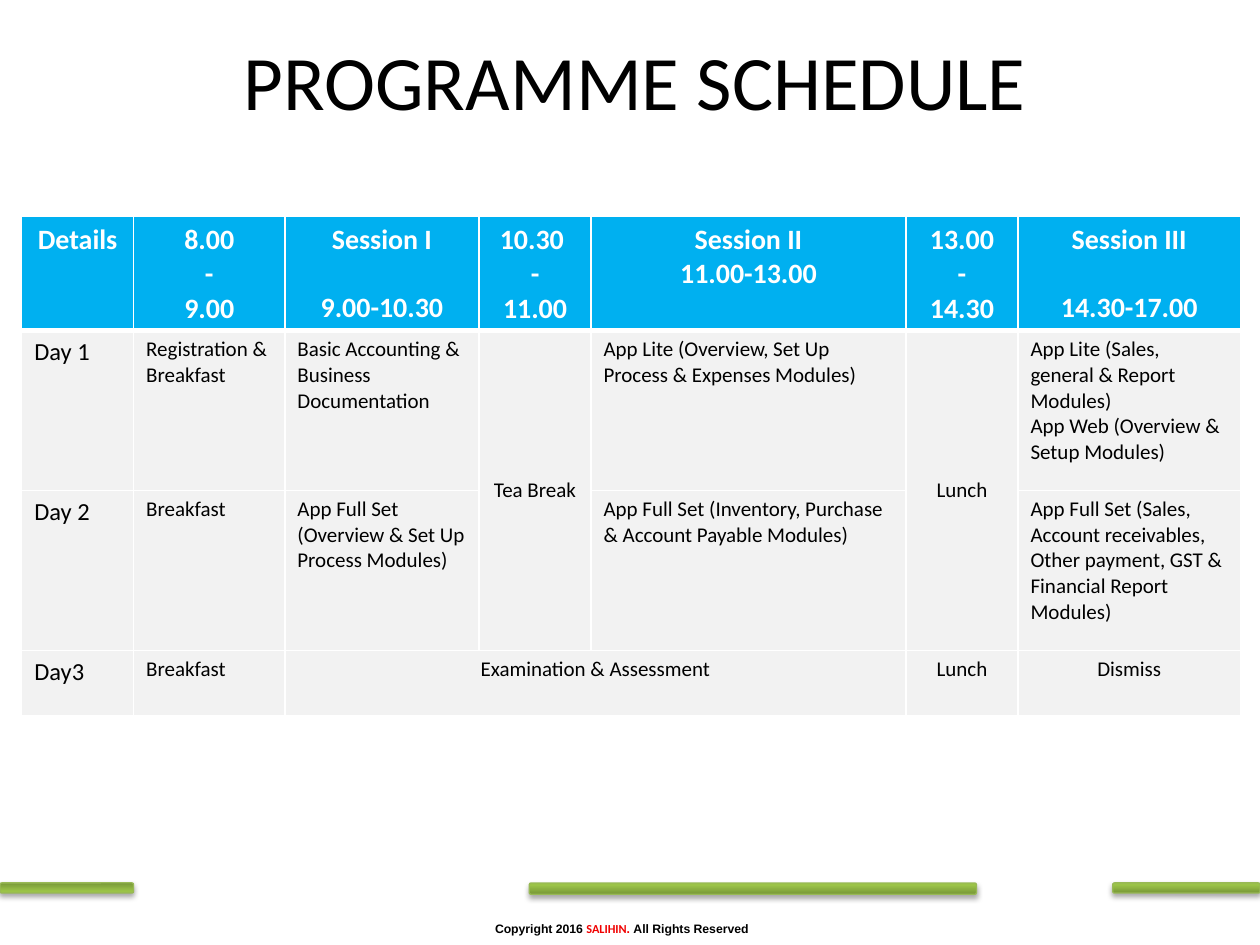
from lxml import etree
from pptx import Presentation
from pptx import util as u
from pptx.dml.color import RGBColor
from pptx.enum import shapes, text
from pptx.oxml import ns

COLOURS = {
    "header": "00B0F0", "body": "F2F2F2", "white": "FFFFFF", "black": "000000",
    "red": "F00000", "bar_dark": "779737", "bar_light": "9BC348",
    "bar_line": "98B955",
}
COLUMNS = [64, 86.4, 111, 64, 180, 64, 127.2]
ROWS = [64.8, 91.4, 91.4, 37.4]
HEADER = [
    ["Details"],
    ["8.00", "-", "9.00"],
    ["Session I", "9.00-10.30"],
    ["10.30 ", "-", "11.00"],
    ["Session II", "11.00-13.00"],
    ["13.00", "-", "14.30"],
    ["Session III", "14.30-17.00"],
]
LINE_GAPS = {2: 19.5, 6: 19.5}  # column: space above the session's time
BODY = [
    [["Day 1"], ["Registration & Breakfast"],
     ["Basic Accounting & Business Documentation"], ["Tea Break"],
     ["App Lite (Overview, Set Up Process & Expenses Modules)"], ["Lunch"],
     ["App Lite (Sales, general & Report Modules)",
      "App Web (Overview & Setup Modules)"]],
    [["Day 2"], ["Breakfast"],
     ["App Full Set (Overview & Set Up Process Modules)"], None,
     ["App Full Set (Inventory, Purchase & Account Payable Modules)"], None,
     ["App Full Set (Sales, Account receivables, Other payment, GST & "
      "Financial Report Modules)"]],
    [["Day3"], ["Breakfast"], ["Examination & Assessment"], None, None,
     ["Lunch"], ["Dismiss"]],
]
MERGES = [((1, 3), (2, 3)), ((1, 5), (2, 5)), ((3, 2), (3, 4))]
CENTRED = {(1, 3), (1, 5), (3, 2), (3, 5), (3, 6)}


def rgb(name):
    return RGBColor.from_string(COLOURS[name])


def set_font(font, colour, **values):
    font.color.rgb = rgb(colour)
    for name, value in values.items():
        setattr(font, name, value)


def place(box, left, top, width, height):
    frame = dict(left=left, top=top, width=width, height=height)
    for name, value in frame.items():
        setattr(box, name, u.Pt(value))


def add_child(parent, tag, **attributes):
    return etree.SubElement(parent, ns.qn(tag), attributes)


def add_title(page, words):
    title = page.shapes.title
    place(title, 36, 12.2, 653.8, 66.2)
    title.text_frame.vertical_anchor = text.MSO_ANCHOR.MIDDLE
    para = title.text_frame.paragraphs[0]
    para.alignment = text.PP_ALIGN.CENTER
    span = para.add_run()
    span.text = words
    set_font(span.font, "black", name="Calibri", size=u.Pt(44))


def add_bar(page, left, width, height, flipped):
    """Add a green footer bar with a soft shadow below it."""
    bar = page.shapes.add_shape(
        shapes.MSO_SHAPE.ROUNDED_RECTANGLE,
        u.Pt(left), u.Pt(504.5), u.Pt(width), u.Pt(height))
    bar.rotation = 180
    properties = bar._element.spPr
    if flipped:
        properties.find(ns.qn("a:xfrm")).set("flipV", "1")
    bar.fill.gradient()
    bar.fill.gradient_angle = 90
    stops = [(0, "bar_dark"), (0.8, "bar_light")]
    for stop, (position, colour) in zip(bar.fill.gradient_stops, stops):
        stop.position = position
        stop.color.rgb = rgb(colour)
    bar.line.color.rgb = rgb("bar_line")
    bar.line.width = u.Pt(0.75)
    effects = add_child(properties, "a:effectLst")
    shadow = add_child(effects, "a:outerShdw", blurRad=str(u.Pt(3.1)),
                       dist=str(u.Pt(1.8)), dir="5400000", rotWithShape="0")
    shade = add_child(shadow, "a:srgbClr", val=COLOURS["black"])
    add_child(shade, "a:alpha", val="35000")


def add_copyright(page):
    box = page.shapes.add_textbox(
        u.Pt(275.8), u.Pt(522.7), u.Pt(302.4), u.Pt(15.8))
    box.text_frame.word_wrap = True
    para = box.text_frame.paragraphs[0]
    for words, font, colour in [
            ("Copyright 2016 ", "Arial", "black"), ("SALIHIN", "Calibri", "red"),
            (". ", "Arial", "red"), ("All Rights Reserved", "Arial", "black")]:
        span = para.add_run()
        span.text = words
        set_font(span.font, colour, name=font, size=u.Pt(7), bold=True)


def set_borders(cell, row):
    properties = cell._tc.get_or_add_tcPr()
    widths = {"a:lnL": 1, "a:lnR": 1, "a:lnT": 3 if row == 1 else 1,
              "a:lnB": 3 if row == 0 else 1}
    for tag, width in widths.items():
        line = add_child(properties, tag, w=str(u.Pt(width)))
        fill = add_child(line, "a:solidFill")
        add_child(fill, "a:srgbClr", val=COLOURS["white"])


def fill_cell(cell, lines, row, column):
    header = row == 0
    set_borders(cell, row)
    cell.fill.solid()
    cell.fill.fore_color.rgb = rgb("header" if header else "body")
    if lines is None:
        return
    size = 16 if header else 14 if column == 0 else 12
    centred = header or (row, column) in CENTRED
    frame = cell.text_frame
    for index, words in enumerate(lines):
        para = frame.add_paragraph() if index else frame.paragraphs[0]
        para.alignment = text.PP_ALIGN.CENTER if centred else text.PP_ALIGN.LEFT
        if header and index and column in LINE_GAPS:
            para.space_before = u.Pt(LINE_GAPS[column])
        span = para.add_run()
        span.text = words
        set_font(span.font, "white" if header else "black",
                 name="Calibri", size=u.Pt(size), bold=header)
    if cell.is_merge_origin and cell.span_height > 1:
        cell.vertical_anchor = text.MSO_ANCHOR.MIDDLE


def add_schedule(page):
    table = page.shapes.add_table(
        len(ROWS), len(COLUMNS), u.Pt(12.4), u.Pt(123.8),
        u.Pt(sum(COLUMNS)), u.Pt(sum(ROWS))).table
    table.horz_banding = False
    for column, width in zip(table.columns, COLUMNS):
        column.width = u.Pt(width)
    for row, height in zip(table.rows, ROWS):
        row.height = u.Pt(height)
    for first, last in MERGES:
        table.cell(*first).merge(table.cell(*last))
    for row, entries in enumerate([HEADER, *BODY]):
        for column, lines in enumerate(entries):
            fill_cell(table.cell(row, column), lines, row, column)


def main():
    deck = Presentation()
    deck.slide_width, deck.slide_height = u.Pt(720), u.Pt(540)
    page = deck.slides.add_slide(deck.slide_layouts[5])
    add_copyright(page)
    add_bar(page, 0, 76.3, 5.8, False)
    add_bar(page, 635.8, 84.2, 5.8, True)
    add_bar(page, 302.4, 255.6, 6.5, True)
    add_title(page, "PROGRAMME SCHEDULE")
    add_schedule(page)
    deck.save("out.pptx")


if __name__ == "__main__":
    main()
